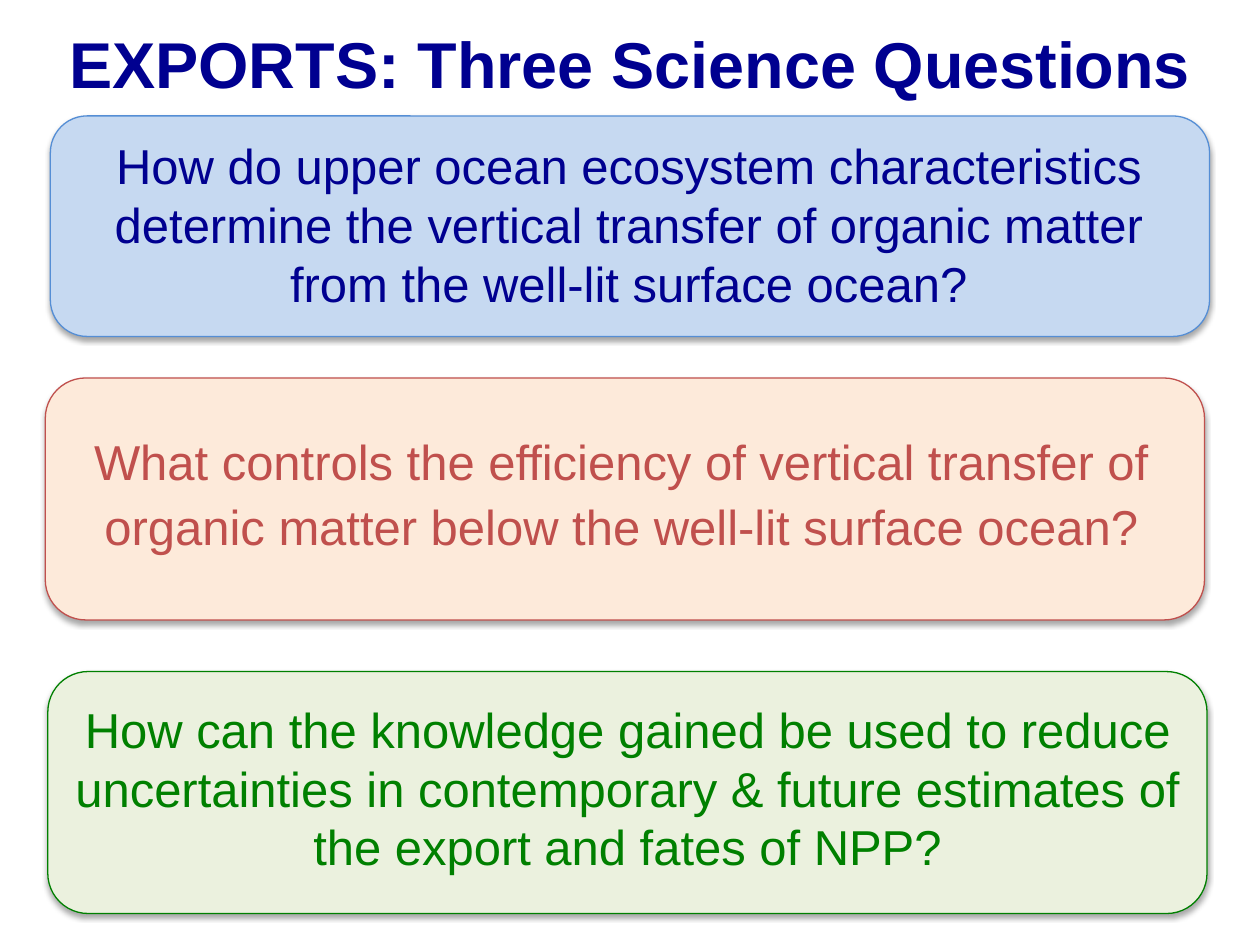
from lxml.etree import SubElement
from pptx import Presentation
from pptx.dml.color import RGBColor
from pptx.enum.shapes import MSO_SHAPE
from pptx.enum.text import MSO_ANCHOR, PP_ALIGN
from pptx.oxml.ns import qn
from pptx.util import Inches, Pt

NAVY, RED, GREEN = "000090", "C0504D", "008000"
WIDTH = 9.2


def color(value):
    return RGBColor.from_string(value)


class QuestionSlide:
    font_name = "Arial"
    question_size = Pt(28)
    title_size = Pt(37)

    def __init__(self, deck):
        self.page = deck.slides.add_slide(deck.slide_layouts[5])

    def set_text(self, frame, text, size, text_color, spacing, bold=False):
        frame.word_wrap = True
        frame.text = text
        para = frame.paragraphs[0]
        para.alignment = PP_ALIGN.CENTER
        para.line_spacing = spacing
        para.font.name = self.font_name
        para.font.size = size
        para.font.bold = bold
        para.font.color.rgb = color(text_color)

    def title(self, text, left, top, height):
        box = self.page.shapes.title
        box.left, box.top = Inches(left), Inches(top)
        box.width, box.height = Inches(WIDTH), Inches(height)
        box.text_frame.vertical_anchor = MSO_ANCHOR.MIDDLE
        self.set_text(box.text_frame, text, self.title_size, NAVY, 0.9, bold=True)

    def panel(self, left, top, height, fill, line):
        panel = self.page.shapes.add_shape(
            MSO_SHAPE.ROUNDED_RECTANGLE,
            Inches(left), Inches(top), Inches(WIDTH), Inches(height))
        panel.fill.solid()
        panel.fill.fore_color.rgb = color(fill)
        panel.line.color.rgb = color(line)
        panel.line.width = Pt(0.75)
        self.soft_shadow(panel)
        return panel

    def soft_shadow(self, shape):
        shape.shadow.inherit = False
        effects = shape._element.spPr.find(qn("a:effectLst"))
        shadow = SubElement(effects, qn("a:outerShdw"), blurRad=str(Pt(3.1)),
                            dist=str(Pt(1.8)), dir="5400000", rotWithShape="0")
        black = SubElement(shadow, qn("a:srgbClr"), val="000000")
        SubElement(black, qn("a:alpha"), val="35000")

    def question(self, text, left, top, height, text_color, spacing):
        box = self.page.shapes.add_textbox(
            Inches(left), Inches(top), Inches(WIDTH), Inches(height))
        self.set_text(box.text_frame, text, self.question_size, text_color, spacing)
        return box

    def group(self, *members):
        self.page.shapes.add_group_shape(members)


def main():
    deck = Presentation()
    deck.slide_width, deck.slide_height = Inches(10), Inches(7.5)
    slide = QuestionSlide(deck)

    slide.title("EXPORTS: Three Science Questions", 0.4, 0.1, 0.87)

    ecosystem_panel = slide.panel(0.4, 0.92, 1.75, "C6D9F1", "558ED5")
    ecosystem_question = slide.question(
        "How do upper ocean ecosystem characteristics determine the vertical "
        "transfer of organic matter from the well-lit surface ocean?",
        0.39, 1.03, 1.38, NAVY, 1.0)
    slide.group(ecosystem_panel, ecosystem_question)

    slide.panel(0.36, 3, 1.92, "FDEADA", RED)
    slide.question(
        "What controls the efficiency of vertical transfer of organic matter "
        "below the well-lit surface ocean?",
        0.33, 3.33, 1.13, RED, 1.1)

    slide.panel(0.38, 5.33, 1.92, "EBF1DE", GREEN)
    slide.question(
        "How can the knowledge gained be used to reduce uncertainties in "
        "contemporary & future estimates of the export and fates of NPP?",
        0.38, 5.5, 1.51, GREEN, 1.0)

    deck.save("out.pptx")


if __name__ == "__main__":
    main()
